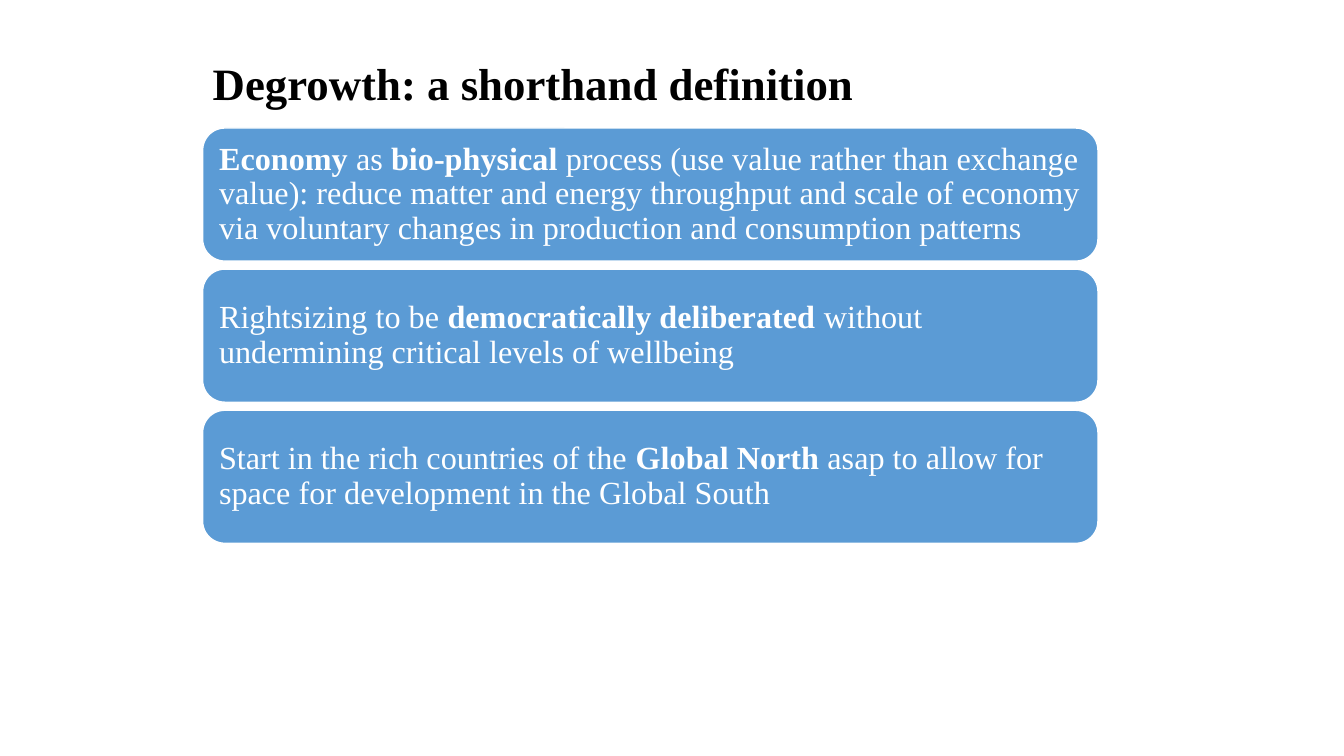
from pptx import Presentation
from pptx.dml.color import RGBColor
from pptx.enum.shapes import MSO_SHAPE
from pptx.enum.text import MSO_ANCHOR, MSO_AUTO_SIZE, PP_ALIGN
from pptx.util import Inches, Pt

COLORS = {"title": "000000", "card": "5B9BD5", "white": "FFFFFF"}
FONT = "Times New Roman"
LEFT, WIDTH = 2.01, 8.88
CARD_TOP, CARD_HEIGHT, CARD_STEP = 1.27, 1.32, 1.4

# Each card is a list of (text, bold) runs
CARDS = [
    [("Economy ", True), ("as ", False), ("bio-physical ", True),
     ("process (use value rather than exchange value): reduce matter and "
      "energy throughput and scale of economy via voluntary changes in "
      "production and consumption patterns", False)],
    [("Rightsizing to be ", False), ("democratically deliberated ", True),
     ("without undermining critical levels of wellbeing", False)],
    [("Start in the rich countries of the ", False), ("Global North ", True),
     ("asap to allow for space for development in the Global South", False)],
]


def color(name):
    return RGBColor.from_string(COLORS[name])


def write(sp, runs, size, color_name):
    tf = sp.text_frame
    tf.word_wrap = True
    tf.auto_size = MSO_AUTO_SIZE.NONE
    tf.vertical_anchor = MSO_ANCHOR.MIDDLE
    tf.margin_left = tf.margin_right = Inches(0.1)
    p = tf.paragraphs[0]
    p.alignment = PP_ALIGN.LEFT
    p.line_spacing = 0.9
    for text, bold in runs:
        r = p.add_run()
        r.text = text
        r.font.name = FONT
        r.font.size = Pt(size)
        r.font.bold = bold
        r.font.color.rgb = color(color_name)


def add_title(s, text):
    sp = s.shapes.title
    sp.left, sp.top = Inches(LEFT), Inches(0.23)
    sp.width, sp.height = Inches(WIDTH), Inches(1.25)
    write(sp, [(text, True)], 32, "title")


def add_card(s, top, runs):
    sp = s.shapes.add_shape(MSO_SHAPE.ROUNDED_RECTANGLE, Inches(LEFT),
                            Inches(top), Inches(WIDTH), Inches(CARD_HEIGHT))
    sp.shadow.inherit = False
    sp.fill.solid()
    sp.fill.fore_color.rgb = color("card")
    sp.line.color.rgb = color("white")
    sp.line.width = Pt(1)
    write(sp, runs, 23, "white")


def main():
    prs = Presentation()
    prs.slide_width, prs.slide_height = Inches(13.33), Inches(7.5)
    s = prs.slides.add_slide(prs.slide_layouts[5])

    # Title
    add_title(s, "Degrowth: a shorthand definition")

    # Stacked cards
    for i, runs in enumerate(CARDS):
        add_card(s, CARD_TOP + i * CARD_STEP, runs)

    prs.save("out.pptx")


if __name__ == "__main__":
    main()
